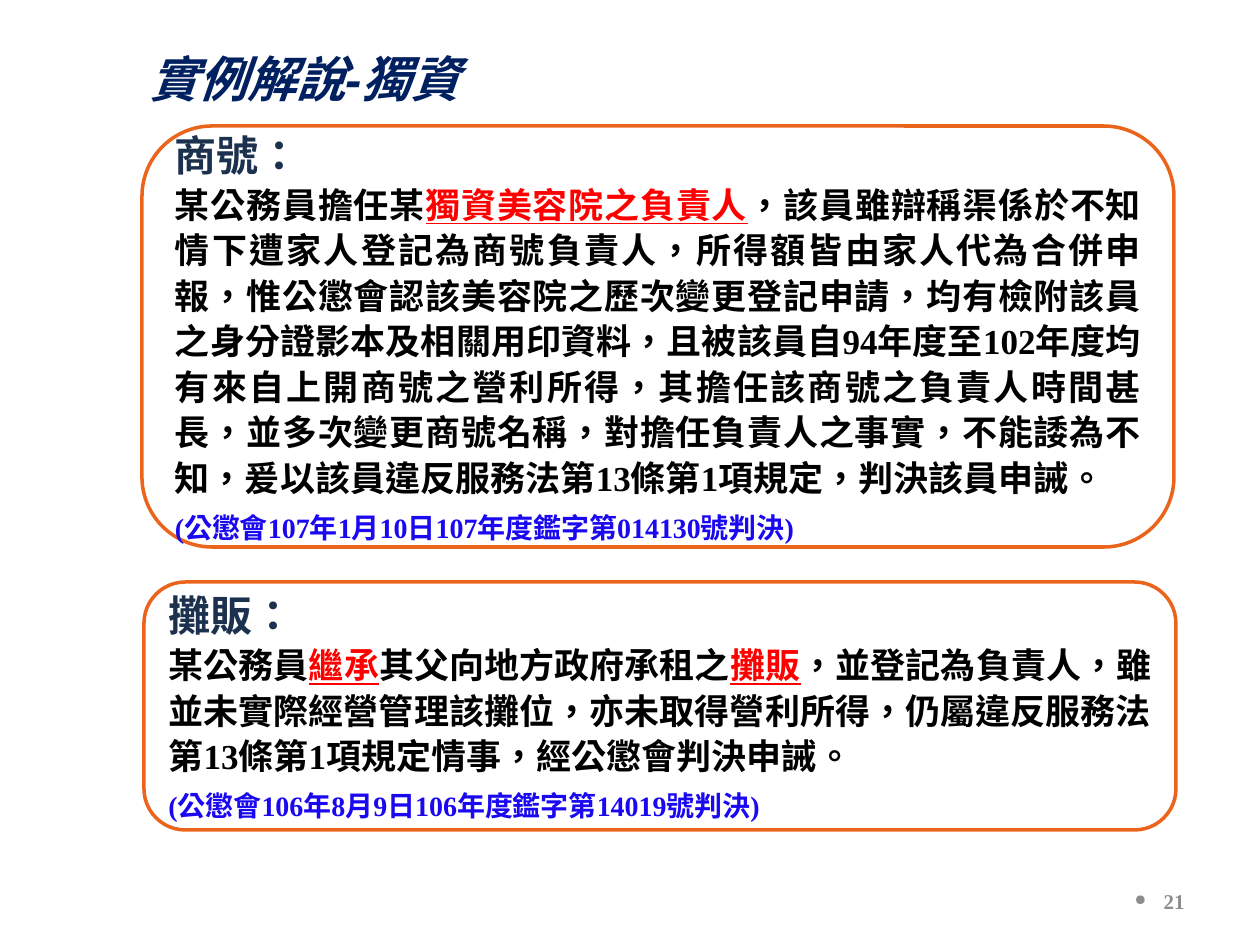
from dataclasses import dataclass

from lxml import etree
from pptx import Presentation
from pptx import util as u
from pptx.dml.color import RGBColor
from pptx.enum import lang, shapes, text
from pptx.oxml import ns


@dataclass(frozen=True)
class Theme:
    """Colours, fonts and type sizes of the page."""
    title: str = "002060"
    heading: str = "1C314E"
    body: str = "000000"
    stress: str = "FF0000"
    source: str = "1908F0"
    frame: str = "EB641B"
    paper: str = "FFFFFF"
    number: str = "8C8C8C"
    sans: str = "Arial"
    serif: str = "Times New Roman"
    cjk: str = "Noto Sans CJK SC"
    title_size: int = 28
    heading_size: int = 24
    body_size: int = 20
    source_size: int = 16
    number_size: int = 12
    line_pitch: int = 26


THEME = Theme()

CASES = [
    ((142, 126, 1032, 421), "商號：", [
        ("某公務員擔任某", False),
        ("獨資美容院之負責人", True),
        ("，該員雖辯稱渠係於不知情下遭家人登記為商號負責人，所得額皆由家人代為合併申報，"
         "惟公懲會認該美容院之歷次變更登記申請，均有檢附該員之身分證影本及相關用印資料，"
         "且被該員自94年度至102年度均有來自上開商號之營利所得，其擔任該商號之負責人時間甚長，"
         "並多次變更商號名稱，對擔任負責人之事實，不能諉為不知，"
         "爰以該員違反服務法第13條第1項規定，判決該員申誡。", False),
    ], "(公懲會107年1月10日107年度鑑字第014130號判決)"),
    ((144, 582, 1032, 248), "攤販：", [
        ("某公務員", False),
        ("繼承", True),
        ("其父向地方政府承租之", False),
        ("攤販", True),
        ("，並登記為負責人，雖並未實際經營管理該攤位，亦未取得營利所得，"
         "仍屬違反服務法第13條第1項規定情事，經公懲會判決申誡。", False),
    ], "(公懲會106年8月9日106年度鑑字第14019號判決)"),
]


def px(count):
    """Turn whole pixels into EMU."""
    return u.Emu(round(count * 914400 / 126))


def add_element(parent, tag, **attributes):
    """Append a drawing element to its parent."""
    return etree.SubElement(parent, ns.qn(tag), attributes)


def style_paragraph(para, font_name, size, color, italic=False):
    """Set the shared bold font of a paragraph, East Asian face included."""
    font = para.font
    font.name, font.size = font_name, u.Pt(size)
    font.bold, font.italic = True, italic
    font.color.rgb = RGBColor.from_string(color)
    add_element(para._p.pPr.find(ns.qn("a:defRPr")), "a:ea", typeface=THEME.cjk)


def add_span(para, words):
    """Add a run of Traditional Chinese text and return it."""
    span = para.add_run()
    span.text = words
    span.font.language_id = lang.MSO_LANGUAGE_ID.TRADITIONAL_CHINESE
    return span


def add_text_box(page, place, anchor):
    """Add a wrapping text box and return it."""
    box = page.shapes.add_textbox(*map(px, place))
    box.text_frame.word_wrap = True
    box.text_frame.vertical_anchor = anchor
    return box


def add_title(page, words):
    """Add the slanted page title."""
    box = add_text_box(page, (137, 42, 804, 72), text.MSO_ANCHOR.TOP)
    box.text_frame.auto_size = text.MSO_AUTO_SIZE.SHAPE_TO_FIT_TEXT
    para = box.text_frame.paragraphs[0]
    add_span(para, words)
    style_paragraph(para, THEME.sans, THEME.title_size, THEME.title, italic=True)


def add_page_number(page, number):
    """Add the bulleted page number at the lower right."""
    box = add_text_box(page, (903, 876, 294, 50), text.MSO_ANCHOR.MIDDLE)
    para = box.text_frame.paragraphs[0]
    para.text = number
    para.alignment = text.PP_ALIGN.RIGHT
    props = para._p.get_or_add_pPr()
    props.set("marL", str(px(29)))
    props.set("indent", str(-px(29)))
    add_element(add_element(props, "a:buClr"), "a:srgbClr", val=THEME.number)
    add_element(props, "a:buSzPct", val="70000")
    add_element(props, "a:buChar", char="●")
    style_paragraph(para, THEME.serif, THEME.number_size, THEME.number)


def add_case(page, place, heading, story, source):
    """Add a rounded frame with a heading, a story and its source."""
    box = page.shapes.add_shape(shapes.MSO_SHAPE.ROUNDED_RECTANGLE, *map(px, place))
    box.shadow.inherit = False
    box.fill.solid()
    box.fill.fore_color.rgb = RGBColor.from_string(THEME.paper)
    box.line.color.rgb = RGBColor.from_string(THEME.frame)
    box.line.width = u.Pt(2)
    frame = box.text_frame
    frame.word_wrap = True
    frame.vertical_anchor = text.MSO_ANCHOR.MIDDLE

    rows = [
        ([(heading, False)], THEME.cjk, THEME.heading_size, THEME.heading, None),
        (story, THEME.serif, THEME.body_size, THEME.body, THEME.line_pitch),
        ([(source, False)], THEME.serif, THEME.source_size, THEME.source, THEME.line_pitch),
    ]
    for index, (spans, font_name, size, color, pitch) in enumerate(rows):
        para = frame.add_paragraph() if index else frame.paragraphs[0]
        para.alignment = text.PP_ALIGN.JUSTIFY
        para._p.get_or_add_pPr().set("hangingPunct", "0")
        if pitch:
            para.line_spacing = u.Pt(pitch)
        style_paragraph(para, font_name, size, color)
        for words, stressed in spans:
            span = add_span(para, words)
            span.font.color.rgb = RGBColor.from_string(THEME.stress if stressed else color)
            if stressed:
                span.font.underline = True


def main():
    """Build the page and save the deck."""
    deck = Presentation()
    deck.slide_width, deck.slide_height = px(1260), px(945)
    page = deck.slides.add_slide(deck.slide_layouts[6])
    add_page_number(page, "21")
    for case in CASES:
        add_case(page, *case)
    add_title(page, "實例解說-獨資")
    deck.save("out.pptx")


if __name__ == "__main__":
    main()
